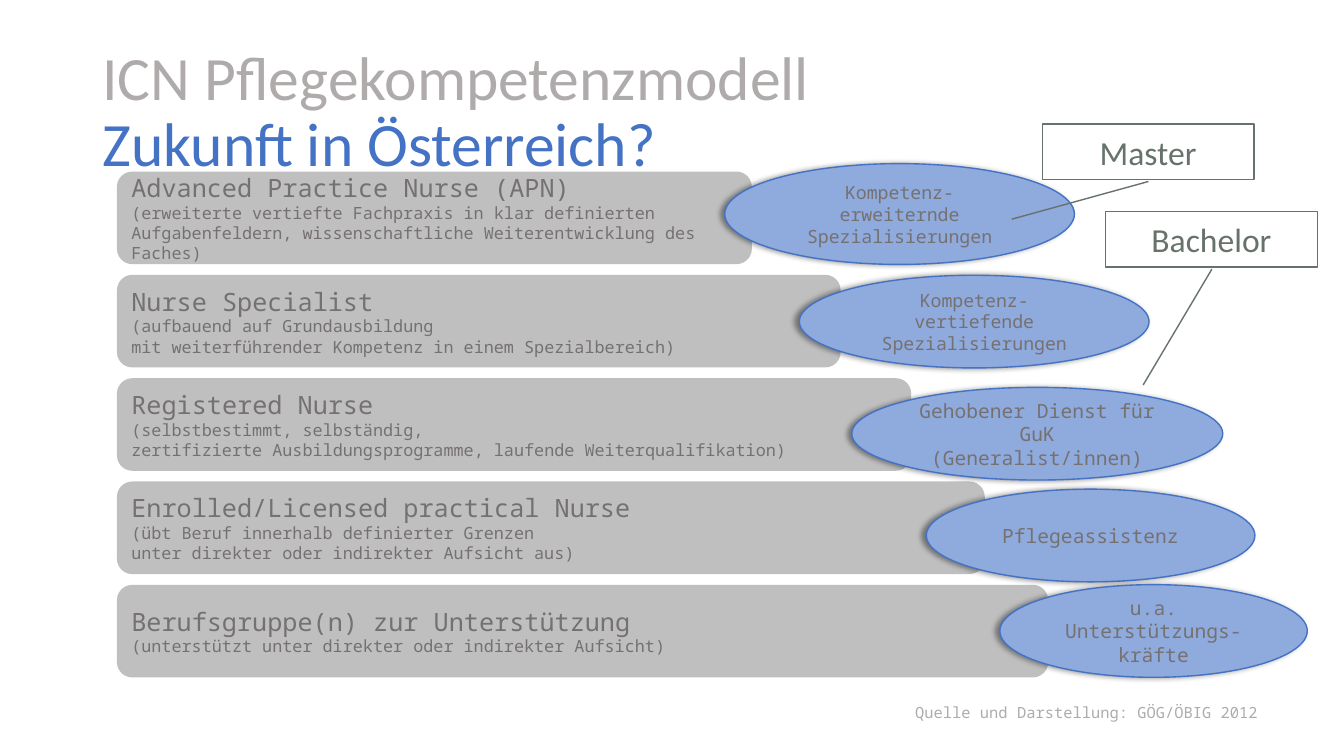
import pptx
import pptx.util
import pptx.dml.color
import pptx.enum.shapes
import pptx.enum.text
import pptx.oxml
import pptx.oxml.ns

Pt = pptx.util.Pt
SHAPES = pptx.enum.shapes.MSO_SHAPE
ALIGN = pptx.enum.text.PP_ALIGN
ANCHOR = pptx.enum.text.MSO_ANCHOR

COLORS = {"bar": "BFBFBF", "oval": "8FAADC", "accent": "4472C4", "text": "767171",
          "muted": "AFABAB", "callout": "67726B"}
MONO, SANS = "Noto Sans Mono", "Calibri"

TITLE = ["ICN Pflegekompetenzmodell", "Zukunft in Österreich?"]
SOURCE = "Quelle und Darstellung: GÖG/ÖBIG 2012"

# heading, explanation lines, bar width
LEVELS = [
    ("Advanced Practice Nurse (APN)",
     ["(erweiterte vertiefte Fachpraxis in klar definierten Aufgabenfeldern, "
      "wissenschaftliche Weiterentwicklung des Faches)"], 453.6),
    ("Nurse Specialist",
     ["(aufbauend auf Grundausbildung",
      "mit weiterführender Kompetenz in einem Spezialbereich)"], 517),
    ("Registered Nurse",
     ["(selbstbestimmt, selbständig,",
      "zertifizierte Ausbildungsprogramme, laufende Weiterqualifikation)"], 567.4),
    ("Enrolled/Licensed practical Nurse",
     ["(übt Beruf innerhalb definierter Grenzen",
      "unter direkter oder indirekter Aufsicht aus)"], 620),
    ("Berufsgruppe(n) zur Unterstützung",
     ["(unterstützt unter direkter oder indirekter Aufsicht)"], 665.3),
]
# text, size, (left, top, width, height), side inset
ROLES = [
    ("Kompetenz-erweiternde Spezialisierungen", 13, (517.7, 116.9, 249.8, 72), 7.2),
    ("Kompetenz-vertiefende Spezialisierungen", 13, (571, 196.6, 249.8, 66.2), 7.2),
    ("Gehobener Dienst für GuK (Generalist/innen)", 14, (608.4, 276.7, 265, 66.2), 7.2),
    ("Pflegeassistenz", 14, (661.7, 349.4, 234.7, 66.2), 7.2),
    ("u.a. Unterstützungs-kräfte", 14, (714.2, 417.6, 219.6, 66.2), 2.9),
]
# text, left, top, callout line (start y, start x, end y, end x) relative to the box
DEGREES = [
    ("Bachelor", 789.8, 151.2, (1.036, 0.502, 3.128, 0.177)),
    ("Master", 744.5, 88.6, (1.036, 0.502, 1.716, -0.144)),
]
BAR_LEFT, BAR_TOP, BAR_PITCH, BAR_HEIGHT = 83.5, 122.5, 73.8, 66.2
DEGREE_WIDTH, DEGREE_HEIGHT = 151.2, 39.6

SHADOW = (
    '<a:effectLst xmlns:a="http://schemas.openxmlformats.org/drawingml/2006/main">'
    f'<a:outerShdw blurRad="{Pt(4)}" dist="{Pt(3)}" dir="{180 * 60000}" rotWithShape="0">'
    '<a:srgbClr val="000000"><a:alpha val="40000"/></a:srgbClr>'
    '</a:outerShdw></a:effectLst>')


def rgb(name):
    return pptx.dml.color.RGBColor.from_string(COLORS[name])


def add_run(paragraph, text, size, font, color):
    run = paragraph.add_run()
    run.text = text
    run.font.size = Pt(size)
    run.font.name = font
    run.font.color.rgb = rgb(color)


def add_box(slide, preset, box, fill=None, line=None):
    """Add a shape without shadow; fill and line are colour names or None."""
    shape = slide.shapes.add_shape(preset, *map(Pt, box))
    shape.shadow.inherit = False
    if fill:
        shape.fill.solid()
        shape.fill.fore_color.rgb = rgb(fill)
    else:
        shape.fill.background()
    if line:
        shape.line.color.rgb = rgb(line)
        shape.line.width = Pt(1)
    else:
        shape.line.fill.background()
    shape.text_frame.word_wrap = True
    shape.text_frame.vertical_anchor = ANCHOR.MIDDLE
    return shape


def add_level(slide, row, heading, explanation, width):
    box = (BAR_LEFT, BAR_TOP + row * BAR_PITCH, width, BAR_HEIGHT)
    frame = add_box(slide, SHAPES.ROUNDED_RECTANGLE, box, "bar").text_frame
    first, second = frame.paragraphs[0], frame.add_paragraph()
    first.alignment = second.alignment = ALIGN.LEFT
    add_run(first, heading, 18, MONO, "text")
    for number, line in enumerate(explanation):
        if number:
            second.add_line_break()
        add_run(second, line, 12, MONO, "text")


def add_role(slide, text, size, box, inset):
    oval = add_box(slide, SHAPES.OVAL, box, "oval", "accent")
    properties = oval.element.spPr
    properties.replace(properties.find(pptx.oxml.ns.qn("a:effectLst")),
                       pptx.oxml.parse_xml(SHADOW))
    frame = oval.text_frame
    frame.margin_left = frame.margin_right = Pt(inset)
    frame.paragraphs[0].alignment = ALIGN.CENTER
    add_run(frame.paragraphs[0], text, size, MONO, "text")


def add_degree(slide, text, left, top, pointer):
    box = (left, top, DEGREE_WIDTH, DEGREE_HEIGHT)
    callout = add_box(slide, SHAPES.LINE_CALLOUT_1, box, line="callout")
    for number, value in enumerate(pointer):
        callout.adjustments[number] = value
    label = callout.text_frame.paragraphs[0]
    label.alignment = ALIGN.CENTER
    add_run(label, text, 24, SANS, "callout")


def add_title(slide):
    frame = slide.shapes.add_textbox(Pt(66), Pt(28.8), Pt(828), Pt(104.4)).text_frame
    frame.word_wrap = True
    frame.vertical_anchor = ANCHOR.MIDDLE
    heading = frame.paragraphs[0]
    heading.line_spacing = 0.9
    add_run(heading, TITLE[0], 44, SANS, "muted")
    heading.add_line_break()
    add_run(heading, TITLE[1], 44, SANS, "accent")


def add_source(slide):
    frame = slide.shapes.add_textbox(Pt(646.6), Pt(499), Pt(310.3), Pt(20.9)).text_frame
    frame.word_wrap = True
    add_run(frame.paragraphs[0], SOURCE, 11, MONO, "muted")


def main():
    deck = pptx.Presentation()
    deck.slide_width, deck.slide_height = Pt(960), Pt(540)
    slide = deck.slides.add_slide(deck.slide_layouts[6])
    for row, level in enumerate(LEVELS):
        add_level(slide, row, *level)
    for role in ROLES:
        add_role(slide, *role)
    add_source(slide)
    add_title(slide)
    for degree in DEGREES:
        add_degree(slide, *degree)
    deck.save("out.pptx")


if __name__ == "__main__":
    main()
